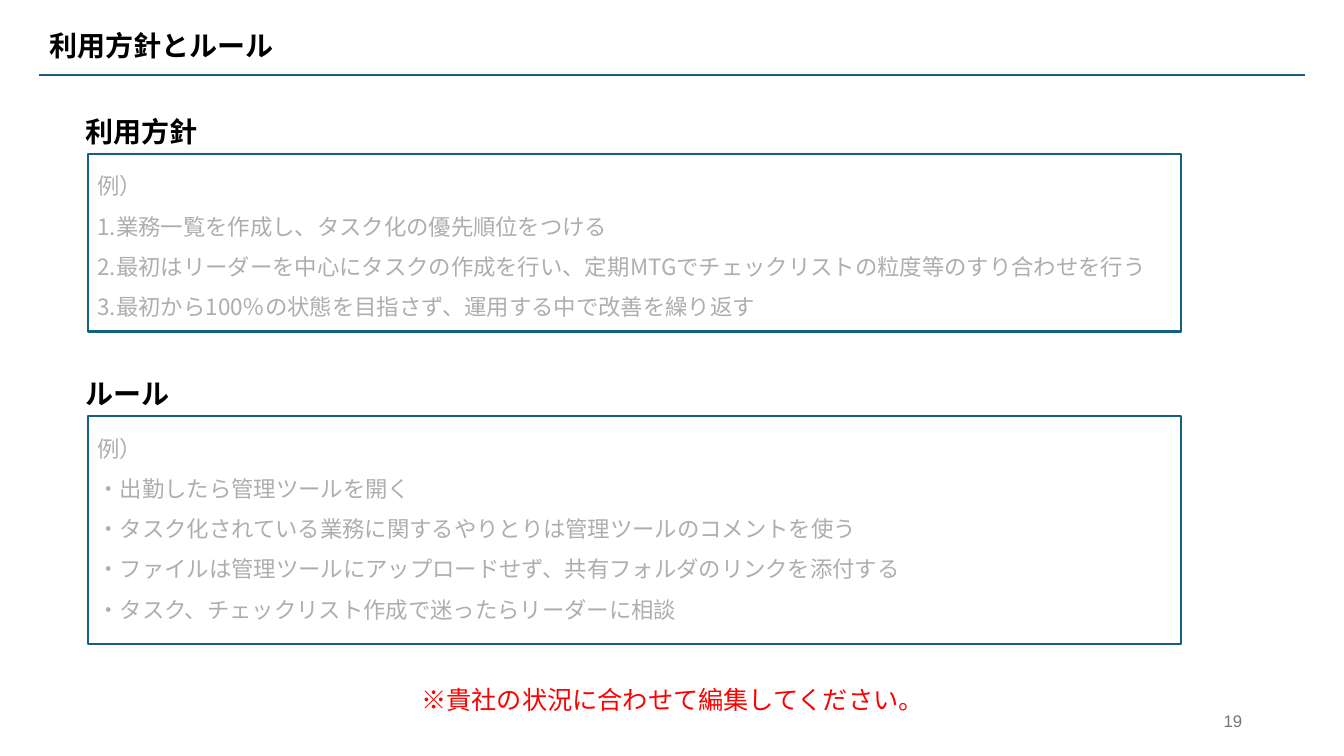
from dataclasses import dataclass

from lxml import etree
from pptx import Presentation
from pptx import util as u
from pptx.dml.color import RGBColor
from pptx.enum import shapes, text
from pptx.oxml.ns import qn


@dataclass(frozen=True)
class Theme:
    blue: str = "156082"
    black: str = "000000"
    gray: str = "AEAEAE"
    red: str = "FF0000"
    dim: str = "757575"
    head: int = 20
    note: int = 18
    body: int = 16
    page: int = 12
    rule: float = 1.5
    font: str = "Noto Sans CJK JP"
    latin: str = "Arial"


T = Theme()
ALIGN = text.PP_ALIGN
MID = text.MSO_ANCHOR.MIDDLE

POLICY = [
    "例）",
    "1.業務一覧を作成し、タスク化の優先順位をつける",
    "2.最初はリーダーを中心にタスクの作成を行い、定期MTGでチェックリストの粒度等のすり合わせを行う",
    "3.最初から100％の状態を目指さず、運用する中で改善を繰り返す",
]
RULES = [
    "例）",
    "・出勤したら管理ツールを開く",
    "・タスク化されている業務に関するやりとりは管理ツールのコメントを使う",
    "・ファイルは管理ツールにアップロードせず、共有フォルダのリンクを添付する",
    "・タスク、チェックリスト作成で迷ったらリーダーに相談",
]


def write(shape, lines, size, color, bold=False, font=T.font,
          align=ALIGN.LEFT, space=1.0, anchor=text.MSO_ANCHOR.TOP):
    frame = shape.text_frame
    frame.text = "\n".join(lines)
    frame.word_wrap = True
    frame.vertical_anchor = anchor
    for para in frame.paragraphs:
        para.alignment = align
        para.line_spacing = space
        for run in para.runs:
            run.font.size = u.Pt(size)
            run.font.bold = bold
            run.font.color.rgb = RGBColor.from_string(color)
            run.font.name = font
            east = etree.SubElement(run._r.get_or_add_rPr(), qn("a:ea"))
            east.set("typeface", font)


def label(slide, box, line, size, color, **style):
    shape = slide.shapes.add_textbox(*map(u.Inches, box))
    write(shape, [line], size, color, **style)


def header(slide, box, title):
    """Title above a rule that spans the box."""
    left, top, width, height = box
    base = top + height
    rule = slide.shapes.add_connector(
        shapes.MSO_CONNECTOR.STRAIGHT,
        *map(u.Inches, (left, base, left + width, base)))
    rule.line.color.rgb = RGBColor.from_string(T.blue)
    rule.line.width = u.Pt(T.rule)
    etree.SubElement(rule._element.spPr, qn("a:effectLst"))
    label(slide, (left, top, 9.13, height), title, T.head, T.black,
          bold=True, space=0.9, anchor=MID)


def section(slide, box, title, lines):
    """Bold heading with a framed list below it."""
    left, top, width, height = box
    gap = 0.58
    label(slide, (left - 0.12, top, 2.17, gap), title, T.head, T.black,
          bold=True, space=1.42)
    frame = slide.shapes.add_shape(
        shapes.MSO_SHAPE.RECTANGLE,
        *map(u.Inches, (left, top + gap, width, height - gap)))
    frame.shadow.inherit = False
    frame.fill.background()
    frame.line.color.rgb = RGBColor.from_string(T.blue)
    frame.line.width = u.Pt(T.rule)
    write(frame, lines, T.body, T.gray, space=1.5)


def footer(slide, box, note, page):
    left, top, width, height = box
    label(slide, (left, top, 7.12, 0.53), note, T.note, T.red,
          align=ALIGN.CENTER, space=1.42)
    label(slide, (left + width - 3, top + height - 0.4, 3, 0.4), page,
          T.page, T.dim, font=T.latin, align=ALIGN.RIGHT, anchor=MID)


def main():
    deck = Presentation()
    deck.slide_width = u.Inches(13.33)
    deck.slide_height = u.Inches(7.5)
    slide = deck.slides.add_slide(deck.slide_layouts[6])
    header(slide, (0.39, 0.2, 12.55, 0.54), "利用方針とルール")
    section(slide, (0.87, 0.95, 10.84, 2.34), "利用方針", POLICY)
    section(slide, (0.87, 3.55, 10.84, 2.84), "ルール", RULES)
    footer(slide, (3.11, 6.61, 9.31, 0.74),
           "※貴社の状況に合わせて編集してください。", "19")
    deck.save("out.pptx")


if __name__ == "__main__":
    main()
